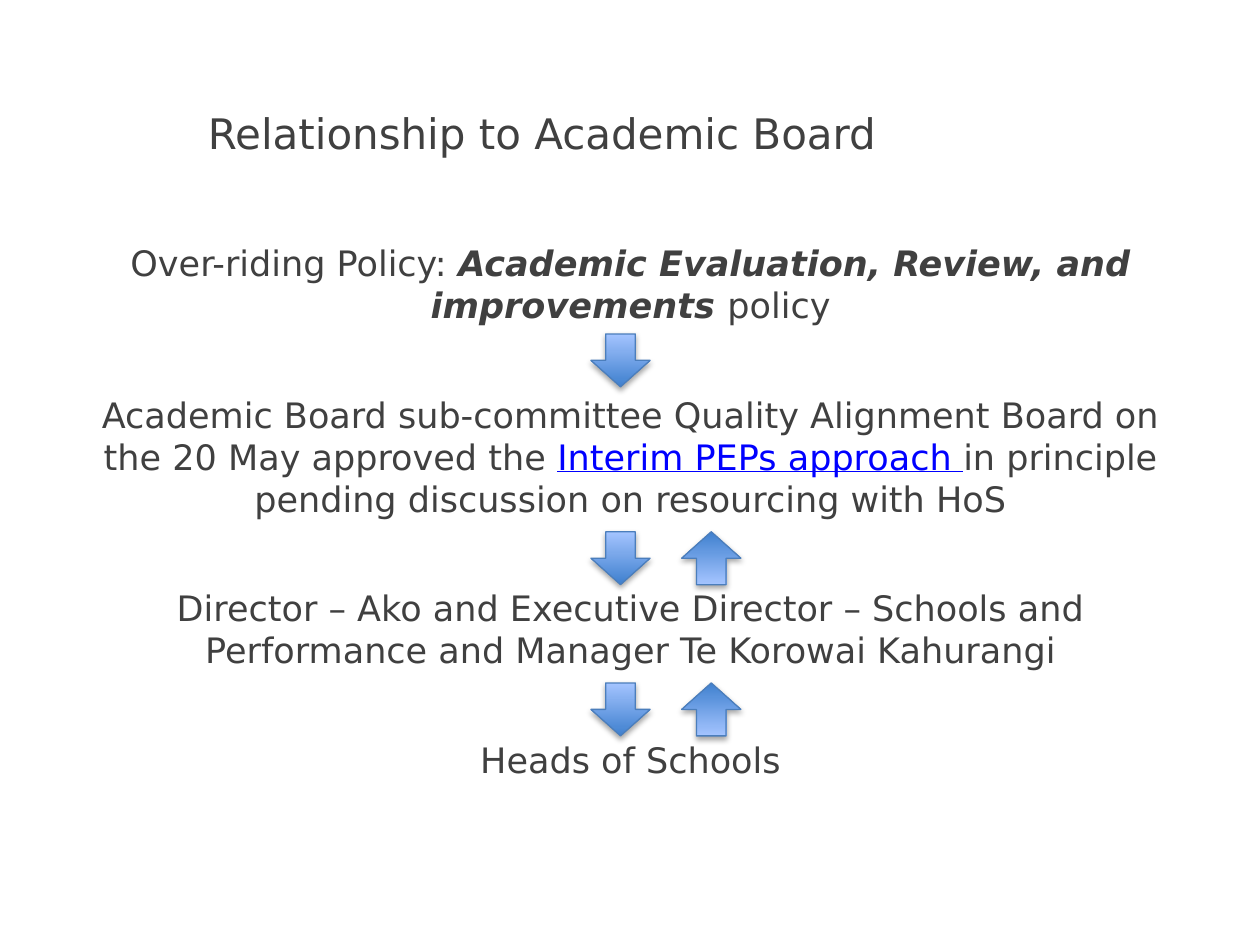
"""Build the slide showing how policy flows between Academic Board and schools."""
from lxml.etree import fromstring
from pptx import Presentation
from pptx.dml.color import RGBColor
from pptx.enum.shapes import MSO_SHAPE
from pptx.enum.text import MSO_ANCHOR, PP_ALIGN
from pptx.util import Inches, Pt

TITLE = "Relationship to Academic Board"
LEVELS = [
    [("Over-riding Policy: ", "plain"),
     ("Academic Evaluation, Review, and improvements ", "policy"),
     ("policy", "plain")],
    [("Academic Board sub-committee Quality Alignment Board on the 20 May approved the ", "plain"),
     ("Interim PEPs approach ", "link"),
     ("in principle pending discussion on resourcing with HoS", "plain")],
    [("Director – Ako and Executive Director – Schools and Performance "
      "and Manager Te Korowai Kahurangi", "plain")],
    [("Heads of Schools", "plain")],
]
ARROW_ROWS = [(2.65, ["down"]), (4.22, ["down", "up"]), (5.42, ["down", "up"])]
ARROW_COLUMNS = {"down": (4.69, 0), "up": (5.41, 180)}
ARROW_SIZE = (0.47, 0.42)
TITLE_BOX = (1.55, 0.51, 7.87, 1.08)
BODY_BOX = (0.58, 1.87, 8.85, 4.49)

THEME = {
    "font": "DejaVu Sans", "title": Pt(24), "body": Pt(20), "gap": Pt(38.5),
    "text": RGBColor.from_string("404040"),
    "link": RGBColor.from_string("0000FF"),
    "outline": RGBColor.from_string("4B7EBC"),
    "gradient": [RGBColor.from_string(c) for c in ("3F80CE", "A4C4FF")],
}
STYLES = {
    "plain": {},
    "policy": {"bold": True, "italic": True},
    "link": {"underline": True},
}
SHADOW = (
    '<a:outerShdw xmlns:a="http://schemas.openxmlformats.org/drawingml/2006/main" '
    'blurRad="40000" dist="23000" dir="5400000" rotWithShape="0">'
    '<a:srgbClr val="000000"><a:alpha val="35000"/></a:srgbClr></a:outerShdw>'
)


def add_run(p, text, size, style="plain"):
    r = p.add_run()
    r.text = text
    for name, value in {"name": THEME["font"], "size": size, **STYLES[style]}.items():
        setattr(r.font, name, value)
    r.font.color.rgb = THEME["link" if style == "link" else "text"]


def add_title(s):
    sp = s.shapes.title
    sp.left, sp.top, sp.width, sp.height = map(Inches, TITLE_BOX)
    tf = sp.text_frame
    tf.vertical_anchor = MSO_ANCHOR.MIDDLE
    tf.paragraphs[0].alignment = PP_ALIGN.LEFT
    add_run(tf.paragraphs[0], TITLE, THEME["title"])


def add_levels(s):
    tf = s.shapes.add_textbox(*map(Inches, BODY_BOX)).text_frame
    tf.word_wrap = True
    for i, runs in enumerate(LEVELS):
        p = tf.add_paragraph() if i else tf.paragraphs[0]
        p.alignment = PP_ALIGN.CENTER
        p.space_before = THEME["gap"] if i else Pt(0)
        for text, style in runs:
            add_run(p, text, THEME["body"], style)


def add_arrow(s, top, direction):
    left, rotation = ARROW_COLUMNS[direction]
    sp = s.shapes.add_shape(MSO_SHAPE.DOWN_ARROW, *map(Inches, (left, top, *ARROW_SIZE)))
    sp.rotation = rotation
    sp.fill.gradient()
    sp.fill.gradient_angle = 90
    for i, (stop, color) in enumerate(zip(sp.fill.gradient_stops, THEME["gradient"])):
        stop.position = i
        stop.color.rgb = color
    sp.line.color.rgb = THEME["outline"]
    sp.line.width = Pt(0.75)
    sp.shadow.inherit = False
    sp.element.spPr.find("{*}effectLst").append(fromstring(SHADOW))


def main():
    prs = Presentation()
    prs.slide_width, prs.slide_height = Inches(10), Inches(7.5)
    s = prs.slides.add_slide(prs.slide_layouts[5])
    add_title(s)
    add_levels(s)
    for top, directions in ARROW_ROWS:
        for direction in directions:
            add_arrow(s, top, direction)
    prs.save("out.pptx")


if __name__ == "__main__":
    main()
